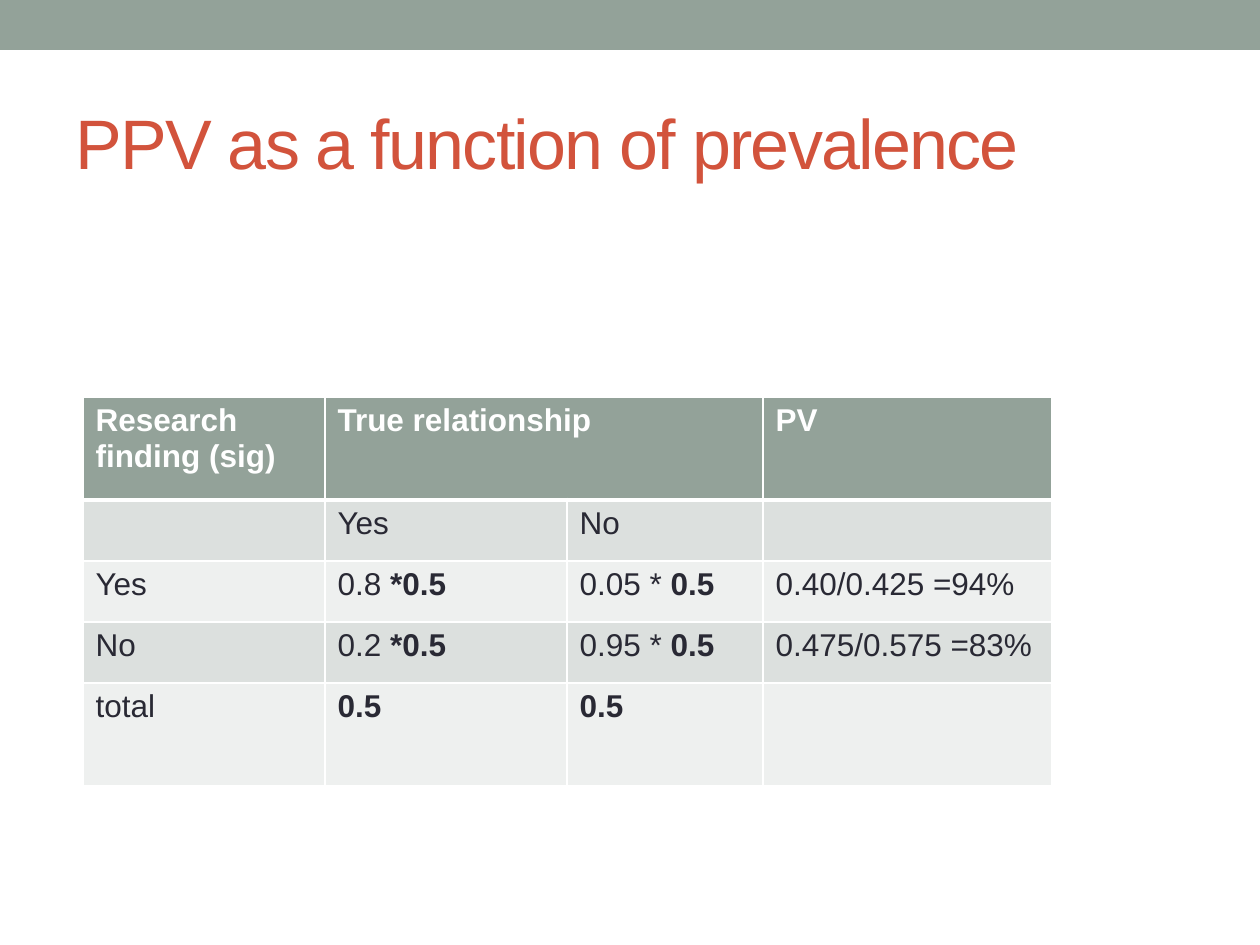
from dataclasses import dataclass

from lxml import etree
from pptx import Presentation
from pptx import util as u
from pptx.dml.color import RGBColor
from pptx.enum import shapes, text
from pptx.oxml.ns import qn

PX_PER_INCH = 126


@dataclass(frozen=True)
class Theme:
    font: str = "Arial"
    title_size: int = 40
    cell_size: int = 18
    sage: str = "93A299"
    title: str = "D2533C"
    ink: str = "292934"
    white: str = "FFFFFF"
    bands: tuple = ("DCE0DE", "EEF0EF")


THEME = Theme()

COLUMN_WIDTHS = [242, 242, 196, 289]
ROW_HEIGHTS = [103, 61, 61, 61, 103]

# Each cell is a list of (text, bold) runs.
PREVALENCE_ROWS = [
    [[("Research finding (sig)", True)], [("True relationship", True)], [], [("PV", True)]],
    [[], [("Yes", False)], [("No", False)], []],
    [[("Yes", False)], [("0.8 ", False), ("*0.5", True)],
     [("0.05 * ", False), ("0.5", True)], [("0.40/0.425 =94%", False)]],
    [[("No", False)], [("0.2 ", False), ("*0.5", True)],
     [("0.95 * ", False), ("0.5", True)], [("0.475/0.575 =83%", False)]],
    [[("total", False)], [("0.5", True)], [("0.5", True)], []],
]


def px(length):
    return u.Emu(round(length * u.Inches(1) / PX_PER_INCH))


def add_run(paragraph, wording, size, color, bold=False):
    run = paragraph.add_run()
    run.text = wording
    run.font.name = THEME.font
    run.font.size = u.Pt(size)
    run.font.bold = bold
    run.font.color.rgb = RGBColor.from_string(color)
    return run


def add_top_band(slide, left, top, width, height):
    band = slide.shapes.add_shape(
        shapes.MSO_SHAPE.RECTANGLE, px(left), px(top), px(width), px(height))
    band.shadow.inherit = False
    band.fill.solid()
    band.fill.fore_color.rgb = RGBColor.from_string(THEME.sage)
    band.line.fill.background()


def place_title(slide, left, top, width, height):
    title = slide.shapes.title
    title.left, title.top = px(left), px(top)
    title.width, title.height = px(width), px(height)
    title.text_frame.vertical_anchor = text.MSO_ANCHOR.MIDDLE
    paragraph = title.text_frame.paragraphs[0]
    paragraph.alignment = text.PP_ALIGN.LEFT
    run = add_run(paragraph, "PPV as a function of prevalence",
                  THEME.title_size, THEME.title)
    run.font._element.set("spc", "-100")


def set_borders(cell, bottom_width, top_width):
    """Draw white cell borders; they must come before the fill in the XML."""
    properties = cell._tc.get_or_add_tcPr()
    widths = {"a:lnL": 1, "a:lnR": 1, "a:lnT": top_width, "a:lnB": bottom_width}
    for position, (side, width) in enumerate(widths.items()):
        line = etree.Element(qn(side), w=str(u.Pt(width)))
        fill = etree.SubElement(line, qn("a:solidFill"))
        etree.SubElement(fill, qn("a:srgbClr"), val=THEME.white)
        properties.insert(position, line)


def add_prevalence_table(slide, left, top):
    frame = slide.shapes.add_table(
        len(ROW_HEIGHTS), len(COLUMN_WIDTHS), px(left), px(top),
        px(sum(COLUMN_WIDTHS)), px(sum(ROW_HEIGHTS)))
    table = frame.table
    for column, width in zip(table.columns, COLUMN_WIDTHS):
        column.width = px(width)
    for row, height in zip(table.rows, ROW_HEIGHTS):
        row.height = px(height)
    table.cell(0, 1).merge(table.cell(0, 2))

    for r, row in enumerate(PREVALENCE_ROWS):
        is_header = r == 0
        background = THEME.sage if is_header else THEME.bands[(r - 1) % 2]
        color = THEME.white if is_header else THEME.ink
        for c, runs in enumerate(row):
            cell = table.cell(r, c)
            cell.fill.solid()
            cell.fill.fore_color.rgb = RGBColor.from_string(background)
            set_borders(cell, bottom_width=3 if is_header else 1,
                        top_width=3 if r == 1 else 1)
            paragraph = cell.text_frame.paragraphs[0]
            for wording, bold in runs:
                add_run(paragraph, wording, THEME.cell_size, color, bold)


def main():
    deck = Presentation()
    deck.slide_width, deck.slide_height = px(1260), px(945)
    slide = deck.slides.add_slide(deck.slide_layouts.get_by_name("Title Only"))
    add_top_band(slide, 0, 0, 1260, 50)
    place_title(slide, 63, 73, 1134, 136)
    add_prevalence_table(slide, 83, 397)
    deck.save("out.pptx")


if __name__ == "__main__":
    main()
